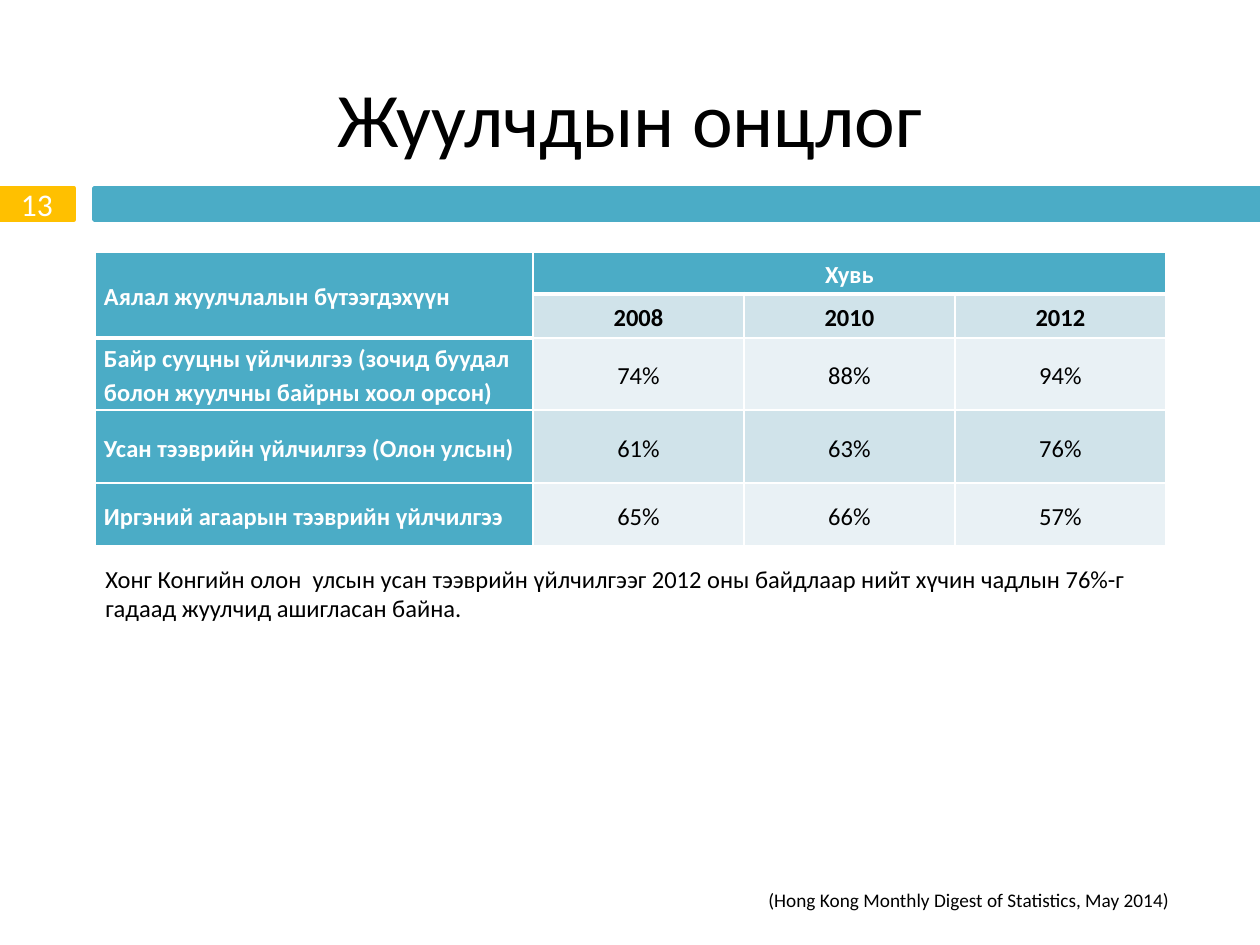
from lxml.etree import SubElement
from pptx import Presentation
from pptx.dml.color import RGBColor
from pptx.enum.shapes import MSO_SHAPE
from pptx.enum.text import MSO_ANCHOR as ANCHOR, MSO_AUTO_SIZE as AUTO, PP_ALIGN as ALIGN
from pptx.oxml import parse_xml
from pptx.oxml.ns import nsdecls, qn
from pptx.util import Pt

PX = 914400 / 126
FONT = "Calibri"
COLORS = {"teal": "4BACC6", "amber": "FFC000", "white": "FFFFFF", "black": "000000",
          "band": "D0E3EA", "pale": "E9F1F5"}

TITLE = "Жуулчдын онцлог"
PAGE = "13"
NOTE = ("Хонг Конгийн олон  улсын усан тээврийн үйлчилгээг 2012 оны байдлаар "
        "нийт хүчин чадлын 76%-г гадаад жуулчид ашигласан байна.")
SOURCE = "(Hong Kong Monthly Digest of Statistics, May 2014)"
ROWS = [
    ["Аялал жуулчлалын бүтээгдэхүүн", "Хувь", "", ""],
    ["", "2008", "2010", "2012"],
    ["Байр сууцны үйлчилгээ (зочид буудал болон жуулчны байрны хоол орсон)",
     "74%", "88%", "94%"],
    ["Усан тээврийн үйлчилгээ (Олон улсын)", "61%", "63%", "76%"],
    ["Иргэний агаарын тээврийн үйлчилгээ", "65%", "66%", "57%"],
]
COL_WIDTHS = [438, 211, 211, 211]
ROW_HEIGHTS = [42, 44, 72, 73, 63]


def px(*values):
    return [round(v * PX) for v in values]


def rgb(name):
    return RGBColor.from_string(COLORS[name])


def write(tf, text, size, color="black", bold=False, **paragraph_format):
    p = tf.paragraphs[0]
    for key, value in paragraph_format.items():
        setattr(p, key, value)
    r = p.add_run()
    r.text = text
    for key, value in {"name": FONT, "size": Pt(size), "bold": bold}.items():
        setattr(r.font, key, value)
    r.font.color.rgb = rgb(color)


def add_text(slide, box, text, size, frame, **paragraph_format):
    tf = slide.shapes.add_textbox(*px(*box)).text_frame
    for key, value in frame.items():
        setattr(tf, key, value)
    write(tf, text, size, **paragraph_format)


def add_bar(slide, box, color):
    sp = slide.shapes.add_shape(MSO_SHAPE.RECTANGLE, *px(*box))
    sp.shadow.inherit = False
    sp.fill.solid()
    sp.fill.fore_color.rgb = sp.line.color.rgb = rgb(color)
    sp.line.width = Pt(2)
    return sp


def set_borders(cell, widths):
    """Put white borders, given in points by side, ahead of the cell fill."""
    tc_pr = cell._tc.get_or_add_tcPr()
    for i, side in enumerate("LRTB"):
        ln = parse_xml(f'<a:ln{side} {nsdecls("a")} w="{Pt(widths.get(side, 1))}"/>')
        fill = SubElement(ln, qn("a:solidFill"))
        SubElement(fill, qn("a:srgbClr"), val=COLORS["white"])
        tc_pr.insert(i, ln)


def add_share_table(slide, left, top):
    size = px(left, top, sum(COL_WIDTHS), sum(ROW_HEIGHTS))
    table = slide.shapes.add_table(len(ROWS), len(COL_WIDTHS), *size).table
    for col, width in zip(table.columns, px(*COL_WIDTHS)):
        col.width = width
    for row, height in zip(table.rows, px(*ROW_HEIGHTS)):
        row.height = height
    table.cell(0, 0).merge(table.cell(1, 0))
    table.cell(0, 1).merge(table.cell(0, 3))

    side_margin = px(9)[0]
    margins = {"margin_left": side_margin, "margin_right": side_margin,
               "margin_top": 0, "margin_bottom": 0, "vertical_anchor": ANCHOR.MIDDLE}
    for r, texts in enumerate(ROWS):
        for c, text in enumerate(texts):
            cell = table.cell(r, c)
            for key, value in margins.items():
                setattr(cell, key, value)
            is_head = r == 0 or c == 0
            cell.fill.solid()
            cell.fill.fore_color.rgb = rgb("teal" if is_head else "band" if r % 2 else "pale")
            body_start = 2 if c == 0 else 1
            set_borders(cell, {"T": 3 if r == body_start else 1,
                               "B": 3 if r == body_start - 1 else 1})
            if text:
                write(cell.text_frame, text, 14, "white" if is_head else "black",
                      is_head or r == 1, line_spacing=1.15,
                      alignment=ALIGN.CENTER if c else ALIGN.LEFT)


def main():
    prs = Presentation()
    prs.slide_width, prs.slide_height = px(1260, 945)
    slide = prs.slides.add_slide(prs.slide_layouts[6])

    add_text(slide, (63, 38, 1134, 158), TITLE, 44,
             {"word_wrap": True, "vertical_anchor": ANCHOR.MIDDLE}, alignment=ALIGN.CENTER)
    add_bar(slide, (94, 188, 1166, 32), "teal")
    tf = add_bar(slide, (0, 188, 74, 32), "amber").text_frame
    tf.vertical_anchor = ANCHOR.MIDDLE
    write(tf, PAGE, 18, "white", alignment=ALIGN.CENTER)
    add_share_table(slide, 95, 252)
    add_text(slide, (93, 557, 1071, 72), NOTE, 14,
             {"word_wrap": True, "vertical_anchor": ANCHOR.MIDDLE,
              "auto_size": AUTO.SHAPE_TO_FIT_TEXT})
    add_text(slide, (756, 882, 430, 36), SOURCE, 11,
             {"word_wrap": False, "auto_size": AUTO.SHAPE_TO_FIT_TEXT})
    prs.save("out.pptx")


if __name__ == "__main__":
    main()
